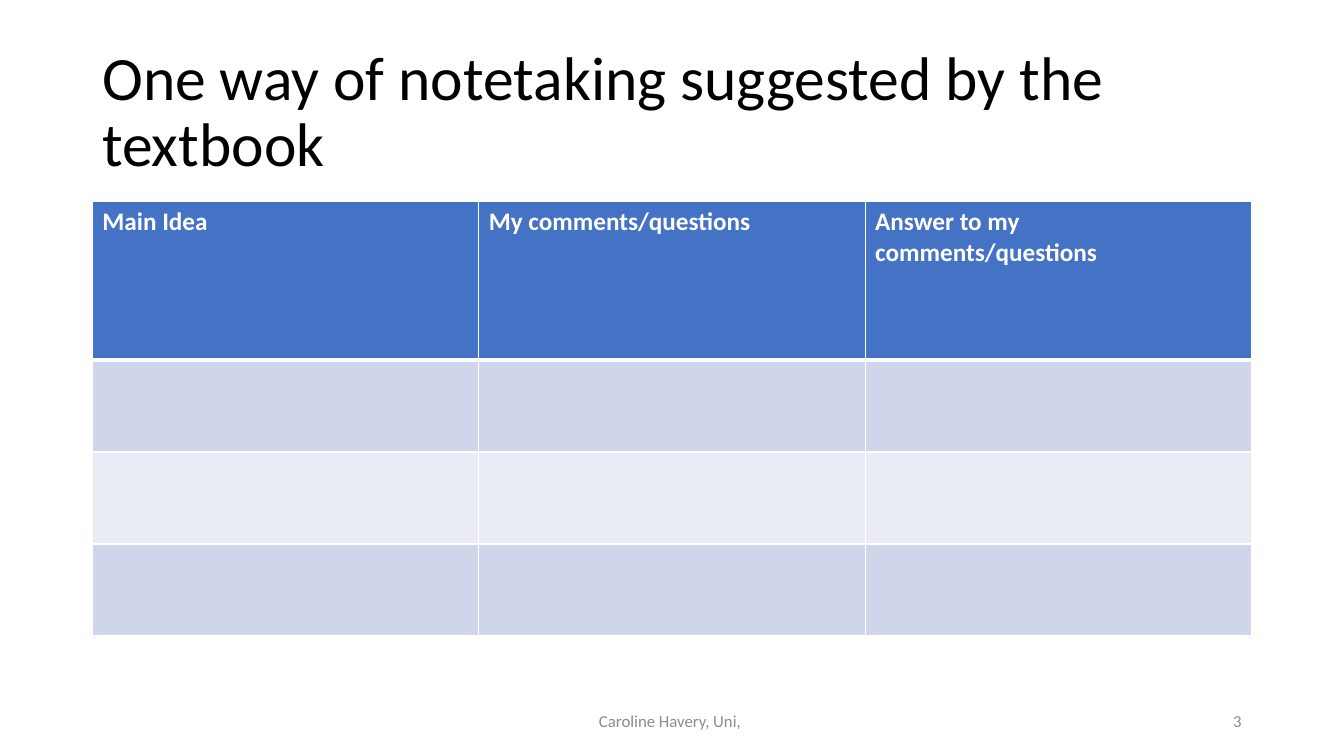
from lxml.etree import SubElement
from pptx import Presentation
from pptx.dml.color import RGBColor
from pptx.enum.text import MSO_ANCHOR, PP_ALIGN
from pptx.oxml.ns import qn
from pptx.util import Pt

# Content
TITLE = "One way of notetaking suggested by the textbook"
HEADINGS = ["Main Idea", "My comments/questions", "Answer to my comments/questions"]
FOOTER = "Caroline Havery, Uni, "
PAGE_NUMBER = "3"
EMPTY_ROWS = 3

# Look
FONT = "Calibri"
BLACK = RGBColor(0x00, 0x00, 0x00)
WHITE = RGBColor(0xFF, 0xFF, 0xFF)
GREY = RGBColor(0x8C, 0x8C, 0x8C)
HEADER_BLUE = RGBColor(0x44, 0x72, 0xC4)
BANDS = [RGBColor(0xCF, 0xD5, 0xEA), RGBColor(0xE9, 0xEB, 0xF5)]
THIN, THICK = 1, 3

# Layout in points
SLIDE_WIDTH, SLIDE_HEIGHT = 960, 540
MARGIN = 66
CONTENT_WIDTH = SLIDE_WIDTH - 2 * MARGIN
TABLE_TOP = 144
HEADER_HEIGHT, ROW_HEIGHT = 113.2, 65.7
FOOTER_TOP, FOOTER_HEIGHT = 500.5, 28.75
FOOTER_WIDTH, NUMBER_WIDTH = 324, 216


def style_text(paragraph, size, color, bold=False):
    for run in paragraph.runs:
        run.font.name = FONT
        run.font.size = Pt(size)
        run.font.color.rgb = color
        run.font.bold = bold


def add_text(slide, text, left, top, width, height, size, color, align):
    frame = slide.shapes.add_textbox(Pt(left), Pt(top), Pt(width), Pt(height)).text_frame
    frame.word_wrap = True
    frame.vertical_anchor = MSO_ANCHOR.MIDDLE
    frame.text = text
    paragraph = frame.paragraphs[0]
    paragraph.alignment = align
    style_text(paragraph, size, color)
    return paragraph


def add_borders(cell, top, bottom):
    """Draw white cell borders; call before the fill is set."""
    properties = cell._tc.get_or_add_tcPr()
    for side, width in (("L", THIN), ("R", THIN), ("T", top), ("B", bottom)):
        line = SubElement(properties, qn(f"a:ln{side}"), w=str(Pt(width)))
        SubElement(SubElement(line, qn("a:solidFill")), qn("a:srgbClr"), val=str(WHITE))


def add_notes_table(slide):
    height = HEADER_HEIGHT + EMPTY_ROWS * ROW_HEIGHT
    table = slide.shapes.add_table(
        EMPTY_ROWS + 1, len(HEADINGS),
        Pt(MARGIN), Pt(TABLE_TOP), Pt(CONTENT_WIDTH), Pt(height)).table
    for column in table.columns:
        column.width = Pt(CONTENT_WIDTH / len(HEADINGS))
    for index, row in enumerate(table.rows):
        row.height = Pt(ROW_HEIGHT if index else HEADER_HEIGHT)
        for cell in row.cells:
            add_borders(cell, top=THICK if index == 1 else THIN,
                        bottom=THIN if index else THICK)
            cell.fill.solid()
            cell.fill.fore_color.rgb = BANDS[(index - 1) % 2] if index else HEADER_BLUE
    for cell, heading in zip(table.rows[0].cells, HEADINGS):
        cell.text_frame.text = heading
        style_text(cell.text_frame.paragraphs[0], 18, WHITE, bold=True)


def main():
    presentation = Presentation()
    presentation.slide_width = Pt(SLIDE_WIDTH)
    presentation.slide_height = Pt(SLIDE_HEIGHT)
    slide = presentation.slides.add_slide(presentation.slide_layouts[6])

    # Title and table
    title = add_text(slide, TITLE, MARGIN, 28.75, CONTENT_WIDTH, 104.4,
                     44, BLACK, PP_ALIGN.LEFT)
    title.line_spacing = 0.9
    add_notes_table(slide)

    # Footer and page number
    add_text(slide, FOOTER, (SLIDE_WIDTH - FOOTER_WIDTH) / 2, FOOTER_TOP,
             FOOTER_WIDTH, FOOTER_HEIGHT, 12, GREY, PP_ALIGN.CENTER)
    add_text(slide, PAGE_NUMBER, SLIDE_WIDTH - MARGIN - NUMBER_WIDTH, FOOTER_TOP,
             NUMBER_WIDTH, FOOTER_HEIGHT, 12, GREY, PP_ALIGN.RIGHT)

    presentation.save("out.pptx")


if __name__ == "__main__":
    main()
